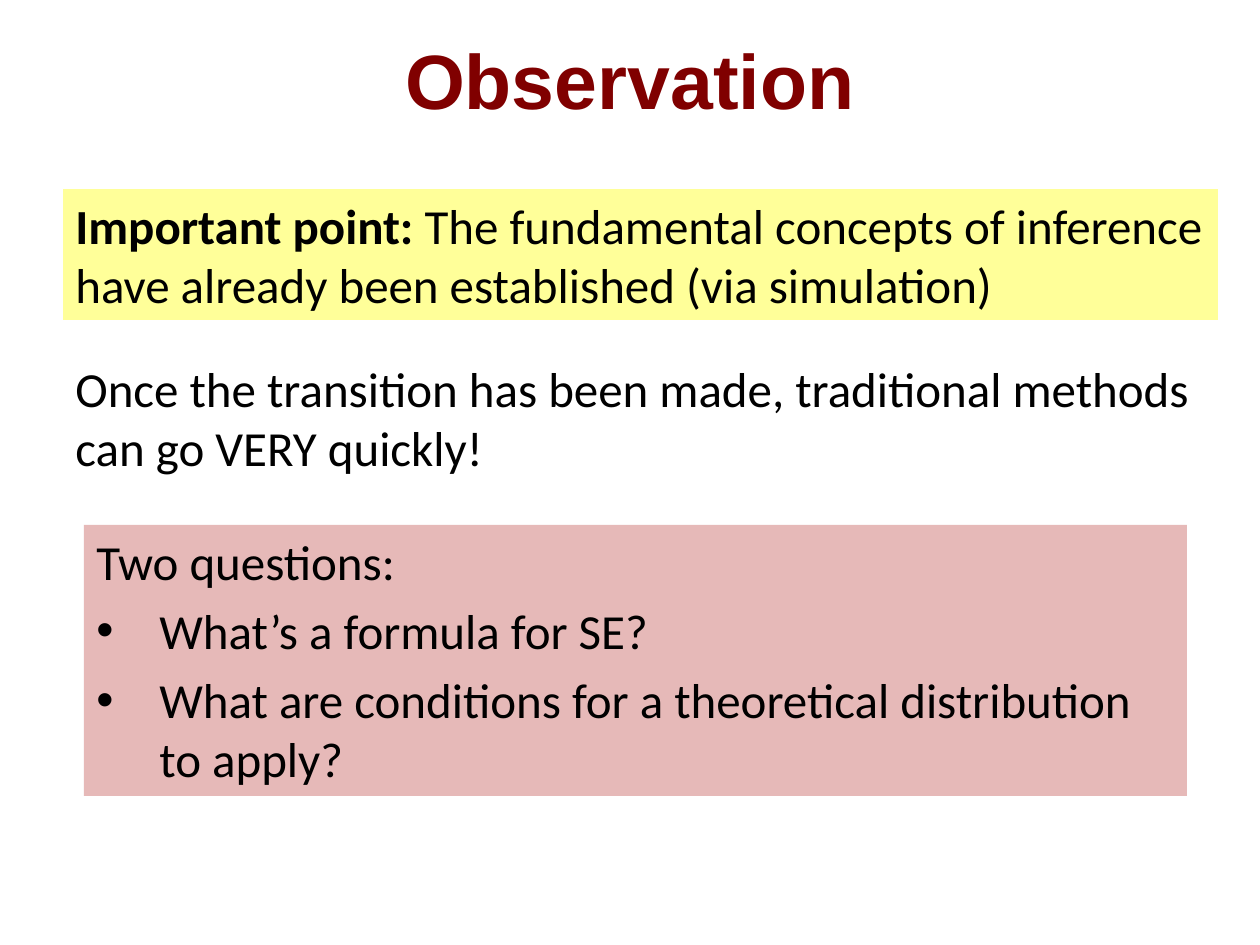
from dataclasses import dataclass

from lxml.etree import SubElement
from pptx import Presentation
from pptx.dml.color import RGBColor as Color
from pptx.enum.shapes import MSO_SHAPE as Shape
from pptx.enum.text import MSO_ANCHOR as Anchor, PP_ALIGN as Align
from pptx.oxml.ns import qn
from pptx.util import Emu, Pt


@dataclass(frozen=True)
class Theme:
    """Colours, fonts and type sizes of the slide."""
    ink: str = "000000"
    maroon: str = "800000"
    yellow: str = "FFFF99"
    rose: str = "E6B9B8"
    title_font: str = "Arial"
    body_font: str = "Calibri"
    title_size: int = 44
    body_size: int = 28
    bullet_gap: int = 6


class SlideWriter:
    """Places styled text and panels on one slide."""

    def __init__(self, deck, theme):
        """Add a blank slide to the deck."""
        self.theme = theme
        self.slide = deck.slides.add_slide(deck.slide_layouts[6])

    @staticmethod
    def px(length):
        """Turn px into EMU at 126 px to the inch."""
        return Emu(round(length * 914400 / 126))

    def title(self, place, text):
        """Add the centred heading."""
        box = self.slide.shapes.add_textbox(*map(self.px, place))
        frame = box.text_frame
        frame.word_wrap = True
        frame.vertical_anchor = Anchor.MIDDLE
        para = frame.paragraphs[0]
        para.alignment = Align.CENTER
        look = self.theme
        self.span(para, text, look.title_font, look.title_size, look.maroon, True)

    def text(self, place, *spans):
        """Add a plain body text box and return its frame."""
        box = self.slide.shapes.add_textbox(*map(self.px, place))
        return self.body(box, spans)

    def panel(self, place, fill, *spans):
        """Add a filled rectangle with body text and return its frame."""
        box = self.slide.shapes.add_shape(Shape.RECTANGLE, *map(self.px, place))
        box.shadow.inherit = False
        box.fill.solid()
        box.fill.fore_color.rgb = Color.from_string(fill)
        box.line.fill.background()
        return self.body(box, spans)

    def body(self, box, spans):
        """Fill the first paragraph of a box."""
        frame = box.text_frame
        frame.word_wrap = True
        frame.vertical_anchor = Anchor.TOP
        self.body_spans(frame.paragraphs[0], spans)
        return frame

    def body_spans(self, para, spans):
        """Write (text, bold) pairs in body style."""
        para.alignment = Align.LEFT
        look = self.theme
        for text, bold in spans:
            self.span(para, text, look.body_font, look.body_size, look.ink, bold)

    def bullet(self, frame, text):
        """Add a bulleted paragraph with a hanging indent."""
        para = frame.add_paragraph()
        para.space_before = Pt(self.theme.bullet_gap)
        props = para._p.get_or_add_pPr()
        indent = self.px(63)
        props.set("marL", str(indent))
        props.set("indent", str(-indent))
        SubElement(props, qn("a:buFont"), typeface="Arial")
        SubElement(props, qn("a:buChar"), char="•")
        self.body_spans(para, [(text, False)])

    @staticmethod
    def span(para, text, font, size, color, bold):
        """Add one styled run."""
        span = para.add_run()
        span.text = text
        span.font.name = font
        span.font.size = Pt(size)
        span.font.bold = bold
        span.font.color.rgb = Color.from_string(color)


def main():
    """Build and save the slide."""
    deck = Presentation()
    deck.slide_width = SlideWriter.px(1260)
    deck.slide_height = SlideWriter.px(945)
    theme = Theme()
    page = SlideWriter(deck, theme)

    page.title((63, 0, 1134, 158), "Observation")
    page.panel(
        (63, 189, 1155, 131), theme.yellow,
        ("Important point: ", True),
        ("The fundamental concepts of inference have already been "
         "established (via simulation)", False),
    )
    page.text(
        (63, 352, 1155, 131),
        ("Once the transition has been made, traditional methods "
         "can go VERY quickly!", False),
    )
    questions = page.panel((84, 525, 1103, 271), theme.rose, ("Two questions:", False))
    for question in (
        "What’s a formula for SE?",
        "What are conditions for a theoretical distribution to apply?",
    ):
        page.bullet(questions, question)

    deck.save("out.pptx")


if __name__ == "__main__":
    main()
